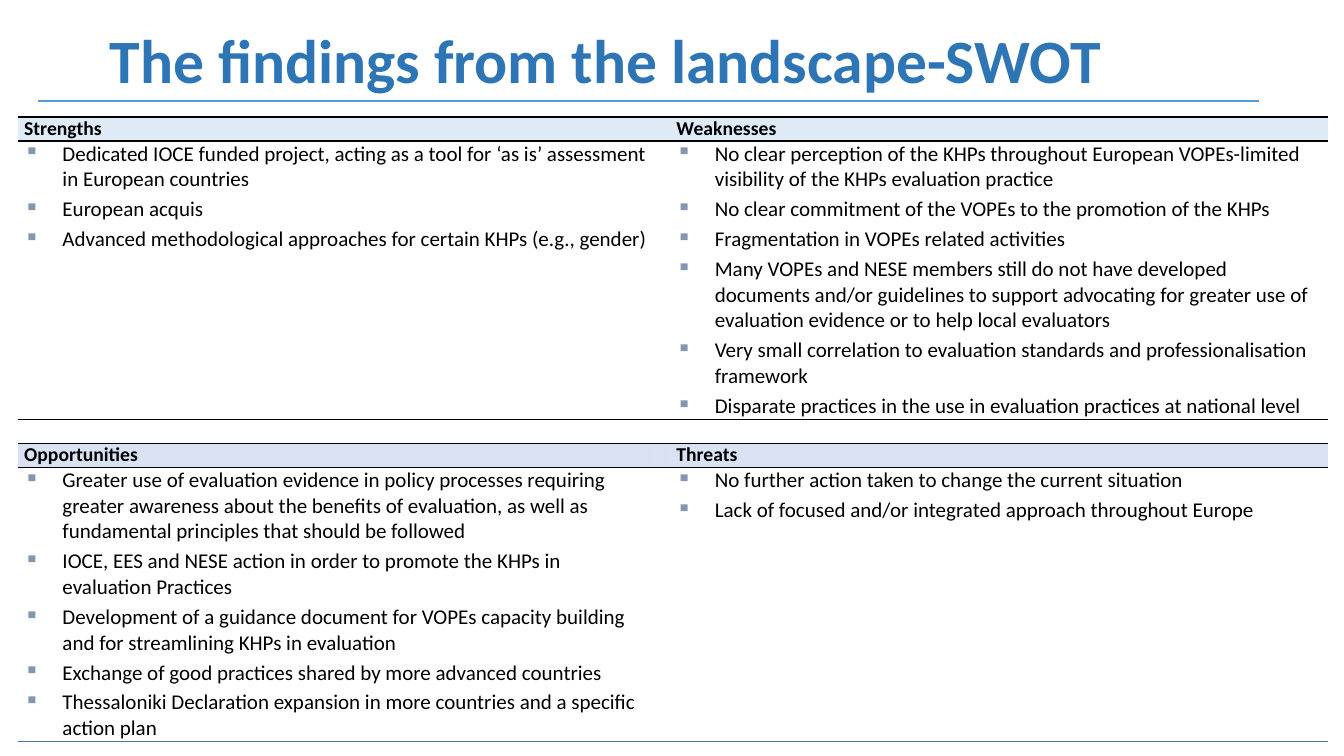
from lxml.etree import SubElement
from pptx import Presentation
from pptx.dml.color import RGBColor
from pptx.enum.shapes import MSO_CONNECTOR
from pptx.enum.text import MSO_ANCHOR, MSO_AUTO_SIZE, PP_ALIGN
from pptx.oxml.ns import qn
from pptx.util import Inches, Pt

COLORS = {
    "title": "2E75B6", "rule": "5B9BD5", "text": "000000", "bullet": "8496B0",
    "border": "000000", "bottom": "4472C4", "upper": "DEEBF7", "lower": "4472C4",
}
FORMATS = {
    "title": {"name": "Calibri", "size": Pt(44), "bold": True},
    "heading": {"name": "Calibri", "size": Pt(14), "bold": True},
    "item": {"name": "Calibri", "size": Pt(15), "bold": False},
}
STRENGTHS = [
    "Dedicated IOCE funded project, acting as a tool for ‘as is’ assessment in European countries",
    "European acquis",
    "Advanced methodological approaches for certain KHPs (e.g., gender)",
]
WEAKNESSES = [
    "No clear perception of the KHPs throughout European VOPEs-limited visibility of the KHPs evaluation practice",
    "No clear commitment of the VOPEs to the promotion of the KHPs",
    "Fragmentation in VOPEs related activities",
    "Many VOPEs and NESE members still do not have developed documents and/or guidelines to support "
    "advocating for greater use of evaluation evidence or to help local evaluators",
    "Very small correlation to evaluation standards and professionalisation framework",
    "Disparate practices in the use in evaluation practices at national level",
]
OPPORTUNITIES = [
    "Greater use of evaluation evidence in policy processes requiring greater awareness about the benefits "
    "of evaluation, as well as fundamental principles that should be followed",
    "IOCE, EES and NESE action in order to promote the KHPs in evaluation Practices",
    "Development of a guidance document for VOPEs capacity building and for streamlining KHPs in evaluation",
    "Exchange of good practices shared by more advanced countries",
    "Thessaloniki Declaration expansion in more countries and a specific action plan",
]
THREATS = [
    "No further action taken to change the current situation",
    "Lack of focused and/or integrated approach throughout Europe",
]
ROWS = [
    (["Strengths"], [], ["Weaknesses"]),
    (STRENGTHS, [], WEAKNESSES),
    ([], [], []),
    (["Opportunities"], [], ["Threats"]),
    (OPPORTUNITIES, [], THREATS),
]
HEADING_FILLS = {0: "upper", 3: "lower"}
ROW_HEIGHTS = [0.24, 2.76, 0.23, 0.24, 2.72]
COLUMN_WIDTHS = [6.31, 0.16, 6.52]


def write(paragraph, text, kind, color):
    run = paragraph.add_run()
    run.text = text
    for name, value in FORMATS[kind].items():
        setattr(run.font, name, value)
    run.font.color.rgb = RGBColor.from_string(COLORS[color])


def set_borders(cell, bottom_color):
    """Draw the top and bottom edges and hide the sides."""
    properties = cell._tc.get_or_add_tcPr()
    edges = {"lnL": None, "lnR": None, "lnT": "border", "lnB": bottom_color}
    for edge, color in edges.items():
        line = SubElement(properties, qn(f"a:{edge}"), w=str(Pt(1)))
        if color:
            fill = SubElement(line, qn("a:solidFill"))
            SubElement(fill, qn("a:srgbClr"), val=COLORS[color])
        else:
            SubElement(line, qn("a:noFill"))


presentation = Presentation()
presentation.slide_width = Inches(13.33)
presentation.slide_height = Inches(7.5)
slide = presentation.slides.add_slide(presentation.slide_layouts[5])

title = slide.shapes.title
title.left, title.top = Inches(0.99), Inches(-0.09)
title.width, title.height = Inches(11.5), Inches(1.45)
title.text_frame.auto_size = MSO_AUTO_SIZE.NONE
title.text_frame.vertical_anchor = MSO_ANCHOR.MIDDLE
paragraph = title.text_frame.paragraphs[0]
paragraph.alignment = PP_ALIGN.LEFT
paragraph.line_spacing = 0.9
write(paragraph, "The findings from the landscape-SWOT", "title", "title")

rule = slide.shapes.add_connector(
    MSO_CONNECTOR.STRAIGHT, Inches(0.38), Inches(1), Inches(12.49), Inches(1))
rule.line.color.rgb = RGBColor.from_string(COLORS["rule"])
rule.line.width = Pt(1.5)
SubElement(rule._element.spPr, qn("a:effectLst"))

frame = slide.shapes.add_table(
    len(ROWS), len(COLUMN_WIDTHS), Inches(0.18), Inches(1.16),
    Inches(sum(COLUMN_WIDTHS)), Inches(sum(ROW_HEIGHTS)))
table = frame.table
table.horz_banding = False
table.first_row = False
for column, width in zip(table.columns, COLUMN_WIDTHS):
    column.width = Inches(width)
for row, height in zip(table.rows, ROW_HEIGHTS):
    row.height = Inches(height)

for row_index, contents in enumerate(ROWS):
    is_heading = row_index in HEADING_FILLS
    is_last = row_index == len(ROWS) - 1
    for column_index, texts in enumerate(contents):
        cell = table.cell(row_index, column_index)
        cell.margin_left = cell.margin_right = Inches(0.06)
        cell.margin_top = cell.margin_bottom = 0
        cell.vertical_anchor = MSO_ANCHOR.TOP
        set_borders(cell, "bottom" if is_last else "border")
        if is_heading:
            fill_name = HEADING_FILLS[row_index]
            cell.fill.solid()
            cell.fill.fore_color.rgb = RGBColor.from_string(COLORS[fill_name])
            if fill_name == "lower":
                color = cell._tc.tcPr.find(qn("a:solidFill")).find(qn("a:srgbClr"))
                SubElement(color, qn("a:alpha"), val="20000")
        else:
            cell.fill.background()

        if not texts:
            SubElement(cell.text_frame.paragraphs[0]._p, qn("a:endParaRPr"), sz="1400")
        for index, text in enumerate(texts):
            paragraph = cell.text_frame.paragraphs[0] if index == 0 else cell.text_frame.add_paragraph()
            if index:
                paragraph.space_before = Pt(3)
            if not is_heading:
                properties = paragraph._p.get_or_add_pPr()
                properties.set("marL", str(Inches(0.38)))
                properties.set("indent", str(-Inches(0.38)))
                bullet_color = SubElement(properties, qn("a:buClr"))
                SubElement(bullet_color, qn("a:srgbClr"), val=COLORS["bullet"])
                SubElement(properties, qn("a:buChar"), char="▪")
            write(paragraph, text, "heading" if is_heading else "item", "text")

presentation.save("out.pptx")
